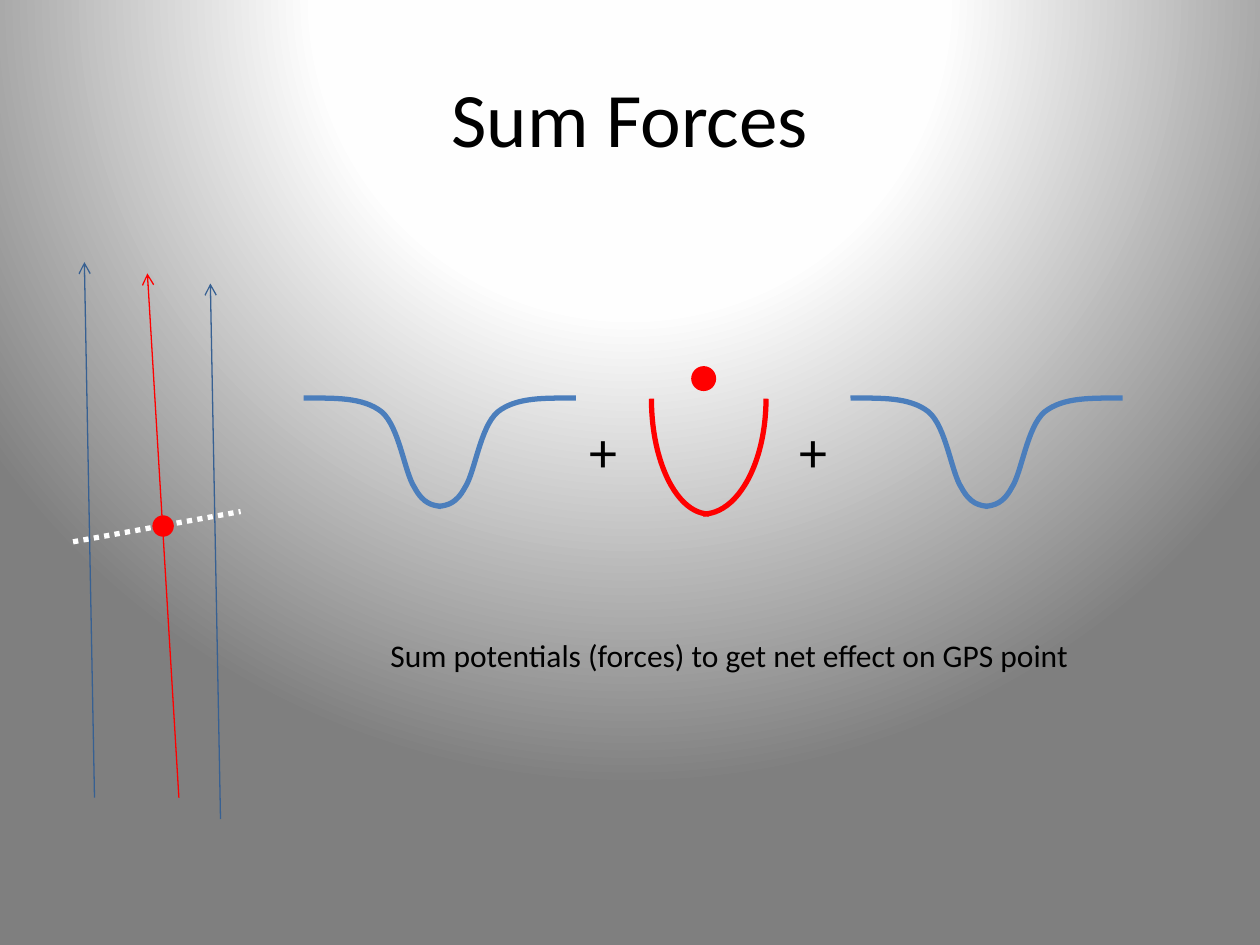
import pptx
import pptx.util
import pptx.dml.color
import pptx.enum.dml
import pptx.enum.shapes
import pptx.enum.text
import pptx.oxml
import pptx.oxml.ns
import lxml.etree

Inches = pptx.util.Inches
qn = pptx.oxml.ns.qn
SHAPE = pptx.enum.shapes.MSO_SHAPE
ALIGN = pptx.enum.text.PP_ALIGN
ANCHOR = pptx.enum.text.MSO_ANCHOR
FIT = pptx.enum.text.MSO_AUTO_SIZE

COLORS = {"text": "000000", "red": "FF0000", "arrow": "376092",
          "well": "4B7EBC", "cross": "FFFFFF"}
FONT = "Calibri"
BACKGROUND_STOPS = [(0, "FFFFFF"), (40, "FEFEFE"), (100, "7F7F7F")]

TITLE = ("Sum Forces", (0.5, 0.3, 9, 1.25), 44)
LABELS = [
    ("+", (4.58, 3.26, 0.43, 0.64), 32),
    ("+", (6.25, 3.26, 0.43, 0.64), 32),
    ("Sum potentials (forces) to get net effect on GPS point",
     (3, 5, 5.65, 0.4), 18),
]
TRACES = [
    ((1.42, 6.33), (1.17, 2.17), "red"),
    ((1.75, 6.5), (1.67, 2.25), "arrow"),
    ((0.75, 6.33), (0.67, 2.08), "arrow"),
]
CROSS_SECTION = ((0.58, 4.3), (1.91, 4.06))
DOT_SIZE = 0.17
TRACE_DOT = (1.21, 4.09)
POTENTIAL_DOT = (5.5, 2.92)
LEFT_WELL, RIGHT_WELL = 3.49, 7.83
WELL_HALF = [(-1.08, 3.16), (-0.84, 3.16), (-0.61, 3.15), (-0.46, 3.27),
             (-0.32, 3.39), (-0.28, 3.75), (-0.2, 3.87),
             (-0.13, 4), (-0.06, 4.01), (0.01, 4.02)]
BOWL_ARCS = [((5.17, 2.25, 0.92, 1.83), 90, 180),
             ((5.08, 2.25, 1, 1.83), 0, 90)]
ARC_UNITS_PER_DEGREE = 0.6


def rgb(name):
    return pptx.dml.color.RGBColor.from_string(COLORS[name])


def set_line(shape, color, width):
    shape.line.color.rgb = rgb(color)
    shape.line.width = pptx.util.Pt(width)


def paint_background(slide):
    slide.background.fill.solid()
    properties = slide.element.find(".//" + qn("p:bgPr"))
    stops = "".join(
        f'<a:gs pos="{position * 1000}"><a:srgbClr val="{color}"/></a:gs>'
        for position, color in BACKGROUND_STOPS)
    gradient = pptx.oxml.parse_xml(
        f'<a:gradFill {pptx.oxml.ns.nsdecls("a")} rotWithShape="1">'
        f'<a:gsLst>{stops}</a:gsLst><a:path path="circle">'
        '<a:fillToRect l="50000" t="-80000" r="50000" b="180000"/>'
        '</a:path></a:gradFill>')
    properties.replace(properties[0], gradient)


def add_text(slide, text, place, size):
    box = slide.shapes.add_textbox(*map(Inches, place))
    frame = box.text_frame
    frame.word_wrap = False
    frame.auto_size = FIT.SHAPE_TO_FIT_TEXT
    span = frame.paragraphs[0].add_run()
    span.text = text
    span.font.name = FONT
    span.font.size = pptx.util.Pt(size)
    span.font.color.rgb = rgb("text")
    return frame


def add_title(slide):
    frame = add_text(slide, *TITLE)
    frame.word_wrap = True
    frame.auto_size = FIT.NONE
    frame.vertical_anchor = ANCHOR.MIDDLE
    frame.paragraphs[0].alignment = ALIGN.CENTER


def add_line(slide, start, end, color, width):
    line = slide.shapes.add_connector(
        pptx.enum.shapes.MSO_CONNECTOR.STRAIGHT, *map(Inches, start + end))
    set_line(line, color, width)
    lxml.etree.SubElement(line.element.spPr, qn("a:effectLst"))
    return line


def add_arrow(slide, start, end, color):
    arrow = add_line(slide, start, end, color, 0.75)
    stroke = arrow.element.spPr.find(qn("a:ln"))
    lxml.etree.SubElement(stroke, qn("a:tailEnd"), type="arrow")


def add_dot(slide, position):
    dot = slide.shapes.add_shape(
        SHAPE.OVAL, *map(Inches, position + (DOT_SIZE, DOT_SIZE)))
    dot.shadow.inherit = False
    dot.fill.solid()
    dot.fill.fore_color.rgb = rgb("red")
    dot.line.fill.background()
    return dot


def bend_segments(shape):
    corners = shape.element.findall(".//" + qn("a:lnTo"))
    for first in range(0, len(corners), 3):
        curve = lxml.etree.Element(qn("a:cubicBezTo"))
        corners[first].addprevious(curve)
        for corner in corners[first:first + 3]:
            curve.append(corner[0])
            corner.getparent().remove(corner)


def add_well(slide, center):
    group = slide.shapes.add_group_shape()
    for side in (1, -1):
        points = [(Inches(center + side * x), Inches(y)) for x, y in WELL_HALF]
        builder = group.shapes.build_freeform(*points[0])
        builder.add_line_segments(points[1:], close=False)
        half = builder.convert_to_shape()
        bend_segments(half)
        half.shadow.inherit = False
        half.fill.background()
        set_line(half, "well", 3)


def add_bowl(slide):
    group = slide.shapes.add_group_shape()
    for place, start, end in BOWL_ARCS:
        arc = group.shapes.add_shape(SHAPE.ARC, *map(Inches, place))
        arc.adjustments[0] = start * ARC_UNITS_PER_DEGREE
        arc.adjustments[1] = end * ARC_UNITS_PER_DEGREE
        arc.shadow.inherit = False
        arc.fill.background()
        set_line(arc, "red", 3)


def main():
    deck = pptx.Presentation()
    deck.slide_width, deck.slide_height = Inches(10), Inches(7.5)
    slide = deck.slides.add_slide(deck.slide_layouts[6])
    paint_background(slide)
    add_title(slide)
    cross = add_line(slide, *CROSS_SECTION, "cross", 3)
    cross.line.dash_style = pptx.enum.dml.MSO_LINE.ROUND_DOT
    for trace in TRACES:
        add_arrow(slide, *trace)
    add_dot(slide, TRACE_DOT)
    add_well(slide, RIGHT_WELL)
    set_line(add_dot(slide, POTENTIAL_DOT), "red", 2)
    add_well(slide, LEFT_WELL)
    add_bowl(slide)
    for label in LABELS:
        add_text(slide, *label)
    deck.save("out.pptx")


if __name__ == "__main__":
    main()
